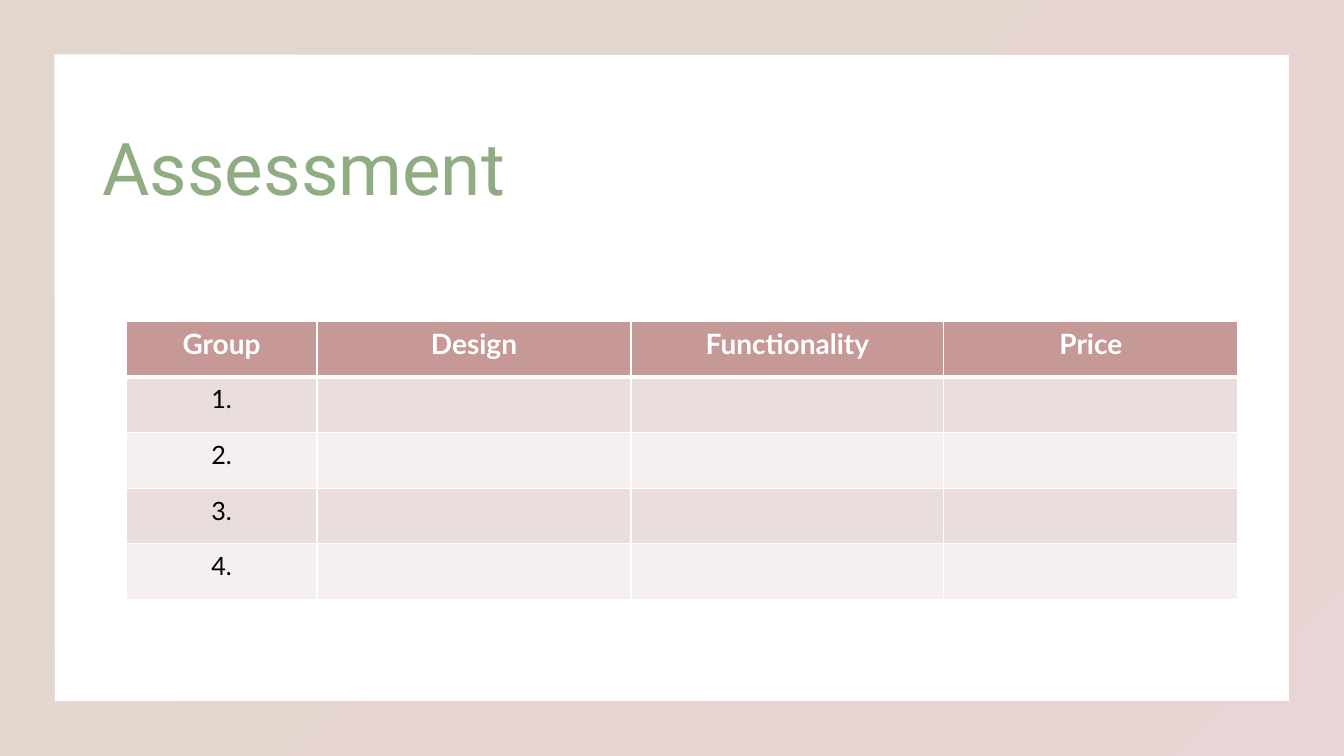
from dataclasses import dataclass

from lxml.etree import SubElement
from pptx import Presentation
from pptx.dml.color import RGBColor as Rgb
from pptx.enum.shapes import MSO_SHAPE as Shape
from pptx.enum.text import MSO_ANCHOR as Anchor, MSO_AUTO_SIZE as Auto, PP_ALIGN as Align
from pptx.oxml.ns import qn
from pptx.util import Pt

PX = 9525  # EMU in one px, 96 px to the inch


@dataclass(frozen=True)
class Theme:
    sand: str = "BA997F"
    rose: str = "C69896"
    green: str = "8FAC82"
    white: str = "FFFFFF"
    black: str = "000000"
    bands: tuple = ("EADDDD", "F5EFEF")
    head_font: str = "Roboto"
    body_font: str = "Lato"
    title: int = 52
    head: int = 20
    body: int = 18


LOOK = Theme()
GRID = [
    ["Group", "Design", "Functionality", "Price"],
    *([f"{num}.", "", "", ""] for num in range(1, 5)),
]


def px(*sizes):
    return [size * PX for size in sizes]


def style(item, form):
    """Set each attribute named in form."""
    for name, value in form.items():
        setattr(item, name, value)


def blend(fill, stops, angle):
    """Give fill a two-stop gradient of (colour, opacity in percent)."""
    fill.gradient()
    fill.gradient_angle = angle
    for stop, (color, alpha) in zip(fill.gradient_stops, stops):
        stop.color.rgb = Rgb.from_string(color)
        if alpha < 100:
            rgb = stop._element.find(qn("a:srgbClr"))
            SubElement(rgb, qn("a:alpha"), val=str(alpha * 1000))


def edge(cell, widths):
    """Draw white borders of the given point widths."""
    props = cell._tc.get_or_add_tcPr()
    for side, width in widths.items():
        line = SubElement(props, qn(f"a:ln{side}"), w=str(Pt(width)))
        fill = SubElement(line, qn("a:solidFill"))
        SubElement(fill, qn("a:srgbClr"), val=LOOK.white)


def add_frame(slide, box):
    frame = slide.shapes.add_shape(Shape.FRAME, *px(*box))
    frame.adjustments[0] = 0.072
    frame.shadow.inherit = False
    frame.line.fill.background()
    blend(frame.fill, [(LOOK.sand, 40), (LOOK.rose, 40)], 315)
    slide.shapes._spTree.insert(2, frame._element)


def add_title(slide, box, text):
    title = slide.shapes.title
    style(title, dict(zip(("left", "top", "width", "height"), px(*box))))
    body = title.text_frame
    body.text = text
    style(body, {"vertical_anchor": Anchor.MIDDLE, "word_wrap": True,
                 "auto_size": Auto.NONE})
    para = body.paragraphs[0]
    style(para, {"alignment": Align.LEFT, "line_spacing": 0.9})
    font = para.runs[0].font
    style(font, {"name": LOOK.head_font, "size": Pt(LOOK.title)})
    blend(font.fill, [(LOOK.green, 100), (LOOK.rose, 70)], 0)


def fill_cell(cell, text, row):
    head = row == 0
    edge(cell, {"L": 1, "R": 1, "T": 3 if row == 1 else 1, "B": 3 if head else 1})
    cell.fill.solid()
    color = LOOK.rose if head else LOOK.bands[(row - 1) % 2]
    cell.fill.fore_color.rgb = Rgb.from_string(color)
    if not text:
        return
    cell.text = text
    para = cell.text_frame.paragraphs[0]
    para.alignment = Align.CENTER
    if not head:
        style(para, {"line_spacing": 1.07, "space_after": Pt(8)})
    font = para.runs[0].font
    style(font, {"name": LOOK.body_font, "bold": head,
                 "size": Pt(LOOK.head if head else LOOK.body)})
    font.color.rgb = Rgb.from_string(LOOK.white if head else LOOK.black)


def add_grid(slide, box, cols, rows):
    table = slide.shapes.add_table(len(rows), len(cols), *px(*box)).table
    for col, width in zip(table.columns, px(*cols)):
        col.width = width
    for row, texts in enumerate(rows):
        for col, text in enumerate(texts):
            fill_cell(table.cell(row, col), text, row)


def main():
    deck = Presentation()
    deck.slide_width, deck.slide_height = px(1280, 720)
    slide = deck.slides.add_slide(deck.slide_layouts[5])
    add_frame(slide, (0, 0, 1280, 720))
    add_title(slide, (88, 71, 1059, 186), "Assessment")
    add_grid(slide, (120, 306, 1059, 265), (182, 299, 298, 280), GRID)
    deck.save("out.pptx")


if __name__ == "__main__":
    main()
